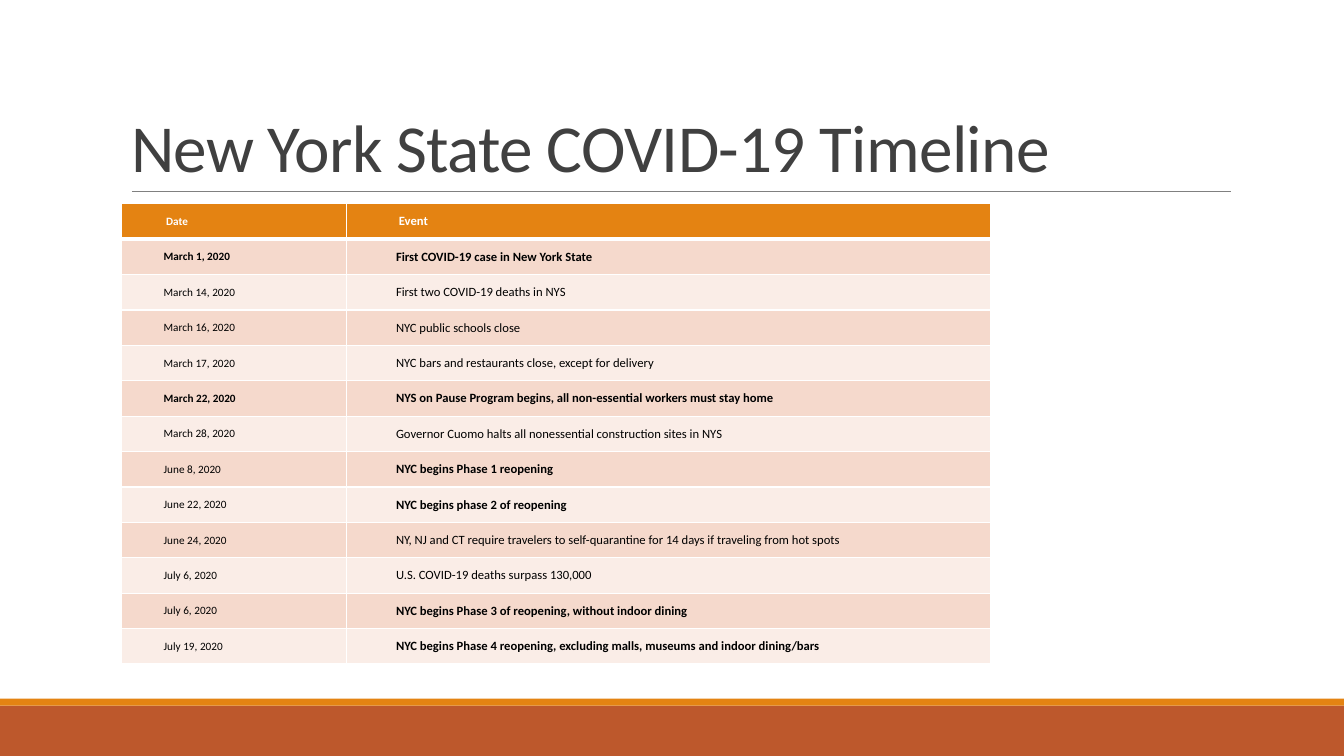
from lxml.etree import SubElement
from pptx import Presentation
from pptx.dml.color import RGBColor
from pptx.enum.shapes import MSO_CONNECTOR, MSO_SHAPE
from pptx.enum.text import MSO_ANCHOR, MSO_AUTO_SIZE, PP_ALIGN
from pptx.oxml.ns import qn
from pptx.util import Pt

FONT = "Calibri"
ORANGE, RUST, WHITE = "E48312", "BD582C", "FFFFFF"
BAND_DARK, BAND_LIGHT = "F5D9CC", "FAEDE7"


def color(hex_value):
    return RGBColor.from_string(hex_value)


def add_border(cell, side, width):
    line = SubElement(cell._tc.get_or_add_tcPr(), qn(f"a:ln{side}"), w=str(Pt(width)))
    fill = SubElement(line, qn("a:solidFill"))
    SubElement(fill, qn("a:srgbClr"), val=WHITE)


prs = Presentation()
prs.slide_width, prs.slide_height = Pt(960), Pt(540)
slide = prs.slides.add_slide(prs.slide_layouts[5])

# Footer bands
for top, height, band_color in [(504, 36, RUST), (499, 5, ORANGE)]:
    band = slide.shapes.add_shape(MSO_SHAPE.RECTANGLE, 0, Pt(top), Pt(960), Pt(height))
    band.shadow.inherit = False
    band.fill.solid()
    band.fill.fore_color.rgb = color(band_color)
    band.line.fill.background()

# Rule under the title
rule = slide.shapes.add_connector(
    MSO_CONNECTOR.STRAIGHT, Pt(94.3), Pt(136.8), Pt(879), Pt(136.8))
rule.line.color.rgb = color("808080")
rule.line.width = Pt(0.5)
SubElement(rule._element.spPr, qn("a:effectLst"))

# Title
title = slide.shapes.title
title.left, title.top, title.width, title.height = Pt(86.4), Pt(22.3), Pt(792), Pt(114.5)
title.text_frame.auto_size = MSO_AUTO_SIZE.NONE
title.text_frame.vertical_anchor = MSO_ANCHOR.BOTTOM
heading = title.text_frame.paragraphs[0]
heading.alignment = PP_ALIGN.LEFT
heading.line_spacing = 0.85
heading_run = heading.add_run()
heading_run.text = "New York State COVID-19 Timeline"
heading_run.font.size = Pt(48)
heading_run.font.name = FONT
heading_run.font.color.rgb = color("404040")
heading_run.font._element.set("spc", "-50")

# Timeline: date, event, date in bold, event in bold
timeline = [
    (" Date", " Event", True, True),
    ("March 1, 2020", "First COVID-19 case in New York State", True, True),
    ("March 14, 2020", "First two COVID-19 deaths in NYS", False, False),
    ("March 16, 2020", "NYC public schools close", False, False),
    ("March 17, 2020", "NYC bars and restaurants close, except for delivery", False, False),
    ("March 22, 2020", "NYS on Pause Program begins, all non-essential workers must stay home",
     True, True),
    ("March 28, 2020", "Governor Cuomo halts all nonessential construction sites in NYS",
     False, False),
    ("June 8, 2020", "NYC begins Phase 1 reopening", False, True),
    ("June 22, 2020", "NYC begins phase 2 of reopening", False, True),
    ("June 24, 2020", "NY, NJ and CT require travelers to self-quarantine for 14 days "
     "if traveling from hot spots", False, False),
    ("July 6, 2020", "U.S. COVID-19 deaths surpass 130,000", False, False),
    ("July 6, 2020", "NYC begins Phase 3 of reopening, without indoor dining", False, True),
    ("July 19, 2020", "NYC begins Phase 4 reopening, excluding malls, museums and "
     "indoor dining/bars", False, True),
]
# Width, left inset, right inset, text size
columns = [(161, 5, 10, 8), (460, 10, 5, 9)]

table = slide.shapes.add_table(
    len(timeline), len(columns), Pt(86.7), Pt(145.6), Pt(621), Pt(329)).table
for row in table.rows:
    row.height = Pt(25.3)

for col, (width, left_inset, right_inset, size) in enumerate(columns):
    table.columns[col].width = Pt(width)
    for row, entry in enumerate(timeline):
        cell = table.cell(row, col)
        cell.vertical_anchor = MSO_ANCHOR.MIDDLE
        cell.margin_left, cell.margin_right = Pt(left_inset), Pt(right_inset)
        cell.margin_top = cell.margin_bottom = Pt(2.6)

        # Borders come before the fill; the header has a thick lower edge
        add_border(cell, "L", 1)
        add_border(cell, "R", 1)
        add_border(cell, "T", 3 if row == 1 else 1)
        add_border(cell, "B", 3 if row == 0 else 1)
        cell.fill.solid()
        band_fill = BAND_DARK if row % 2 else BAND_LIGHT
        cell.fill.fore_color.rgb = color(ORANGE if row == 0 else band_fill)

        line = cell.text_frame.paragraphs[0]
        line.space_before = Pt(7.5)
        indents = line._p.get_or_add_pPr()
        indents.set("marL", str(Pt(7.2)))
        indents.set("indent", str(Pt(18)))
        run = line.add_run()
        run.text = entry[col]
        run.font.name = FONT
        run.font.size = Pt(size)
        run.font.bold = entry[col + 2]
        run.font.color.rgb = color(WHITE if row == 0 else "000000")

prs.save("out.pptx")
